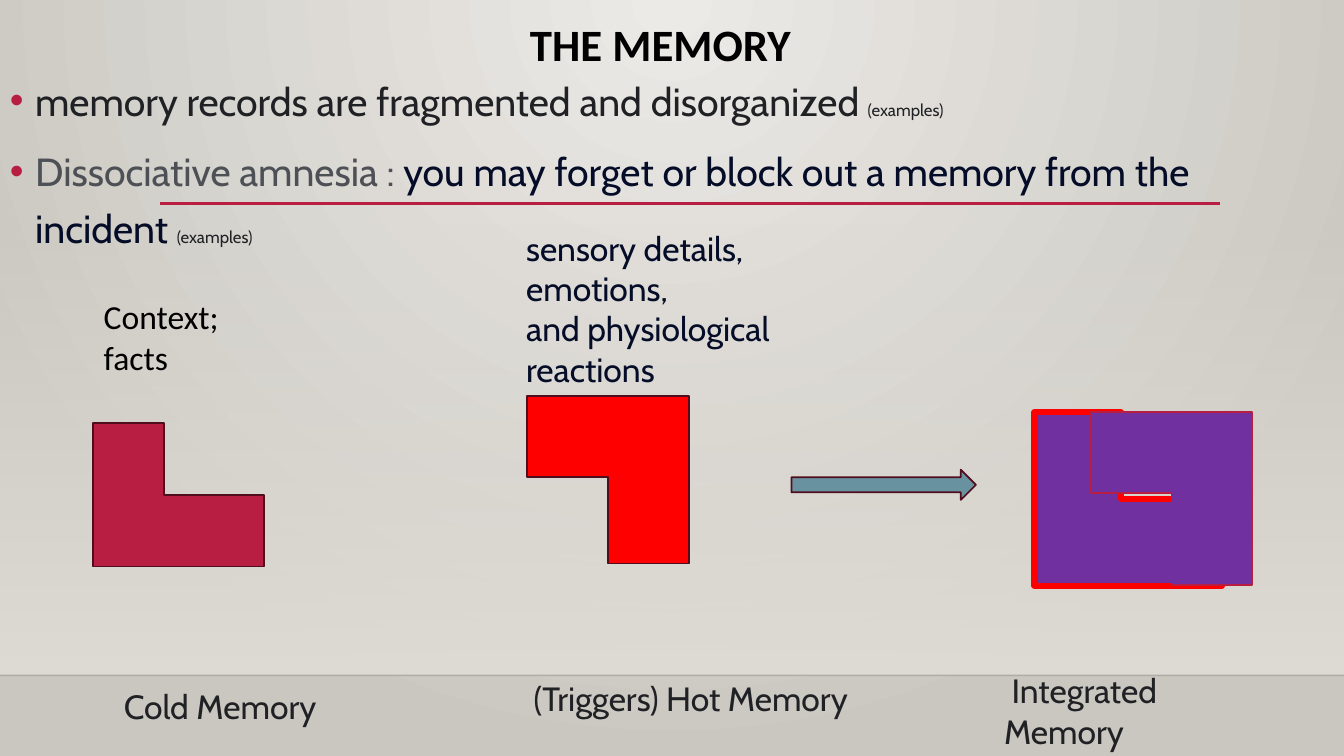
"""Builds the slide on cold, hot and integrated memory."""
import pptx
import pptx.dml.color
import pptx.enum.shapes
import pptx.enum.text
import pptx.oxml
import pptx.oxml.ns
import pptx.util
from pptx.util import Inches

COLORS = {
    "backdrop_light": "ECEAE7", "backdrop_dark": "CAC7C1", "wall": "DFDBD5",
    "crimson": "B71E42", "maroon": "500D1D", "red": "FF0000",
    "purple": "7030A0", "teal": "6892A0", "black": "000000",
    "floor": "000001", "ink": "202124", "gray": "4D5156", "navy": "040C28",
}
NAMESPACE = pptx.oxml.ns.nsdecls("a")
SHAPES = pptx.enum.shapes.MSO_SHAPE


def rgb(name):
    """Return the named colour."""
    return pptx.dml.color.RGBColor.from_string(COLORS[name])


def gradient(start, end, direction, start_alpha=100):
    """Return a two-stop gradient fill element."""
    return pptx.oxml.parse_xml(
        f'<a:gradFill {NAMESPACE} rotWithShape="1"><a:gsLst>'
        f'<a:gs pos="0"><a:srgbClr val="{COLORS[start]}">'
        f'<a:alpha val="{start_alpha * 1000}"/></a:srgbClr></a:gs>'
        f'<a:gs pos="100000"><a:srgbClr val="{COLORS[end]}"/></a:gs>'
        f'</a:gsLst>{direction}</a:gradFill>')


def swap_fill(parent, new_fill):
    """Replace the solid fill of a properties element."""
    old_fill = parent.find(pptx.oxml.ns.qn("a:solidFill"))
    parent.replace(old_fill, new_fill)


def add_backdrop(page):
    """Paint the radial background and the wall that fades in above the floor."""
    page.background.fill.solid()
    page.background.fill.fore_color.rgb = rgb("backdrop_dark")
    swap_fill(page.element.xpath("p:cSld/p:bg/p:bgPr")[0], gradient(
        "backdrop_light", "backdrop_dark",
        '<a:path path="circle"><a:fillToRect l="43000" t="0" r="43000" b="100000"/></a:path>'))
    wall = add_shape(page, SHAPES.RECTANGLE, (0, 2.21, 13.33, 4.49), "wall")
    swap_fill(wall.element.spPr, gradient(
        "wall", "wall", '<a:lin ang="5400000" scaled="0"/>', start_alpha=0))


def add_shape(page, kind, place, fill, line=None, width=1.25, rotation=0):
    """Add a filled preset shape with an optional outline."""
    shape = page.shapes.add_shape(kind, *map(Inches, place))
    shape.shadow.inherit = False
    shape.rotation = rotation
    shape.fill.solid()
    shape.fill.fore_color.rgb = rgb(fill)
    if line:
        shape.line.color.rgb = rgb(line)
        shape.line.width = pptx.util.Pt(width)
    else:
        shape.line.fill.background()
    return shape


def add_rule(page, left, right, top, color, width, alpha=100):
    """Add a horizontal line."""
    rule = page.shapes.add_connector(
        pptx.enum.shapes.MSO_CONNECTOR.STRAIGHT,
        Inches(left), Inches(top), Inches(right), Inches(top))
    rule.line.color.rgb = rgb(color)
    rule.line.width = pptx.util.Pt(width)
    tint = rule.element.spPr.xpath("a:ln/a:solidFill/a:srgbClr")[0]
    tint.append(pptx.oxml.parse_xml(f'<a:alpha {NAMESPACE} val="{alpha * 1000}"/>'))
    rule.element.spPr.append(pptx.oxml.parse_xml(f"<a:effectLst {NAMESPACE}/>"))


def add_text(page, place, paragraphs, font="Cabin"):
    """Add a text box whose paragraphs are lists of (text, size, colour) spans."""
    box = page.shapes.add_textbox(*map(Inches, place))
    box.text_frame.word_wrap = True
    box.text_frame.text = "\n".join("" for _ in paragraphs)
    for para, spans in zip(box.text_frame.paragraphs, paragraphs):
        for text, size, color in spans:
            span = para.add_run()
            span.text = text
            span.font.name = font
            span.font.size = pptx.util.Pt(size)
            span.font.color.rgb = rgb(color)
    return box


def add_title(page, text):
    """Add the centred bold title."""
    box = add_text(page, (0.8, 0.18, 11.5, 0.93), [[(text, 32, "black")]], "Calibri")
    para = box.text_frame.paragraphs[0]
    para.alignment = pptx.enum.text.PP_ALIGN.CENTER
    para.line_spacing = 0.9
    para.runs[0].font.bold = True


def add_bullets(page, place, paragraphs):
    """Add a bulleted list with hanging indents."""
    box = add_text(page, place, paragraphs)
    for index, para in enumerate(box.text_frame.paragraphs):
        para.line_spacing = 1.2
        para.space_before = pptx.util.Pt(10 if index else 0)
        properties = para._p.get_or_add_pPr()
        properties.set("marL", str(Inches(0.25)))
        properties.set("indent", str(-Inches(0.25)))
        for xml in (
                f'<a:buClr {NAMESPACE}><a:srgbClr val="{COLORS["crimson"]}"/></a:buClr>',
                f'<a:buFont {NAMESPACE} typeface="Arial"/>',
                f'<a:buChar {NAMESPACE} char="•"/>'):
            properties.append(pptx.oxml.parse_xml(xml))


def main():
    """Build and save the deck."""
    deck = pptx.Presentation()
    deck.slide_width, deck.slide_height = Inches(13.33), Inches(7.5)
    page = deck.slides.add_slide(deck.slide_layouts[6])

    add_backdrop(page)
    add_rule(page, 0, 13.33, 6.7, "floor", 1, alpha=20)
    add_rule(page, 1.59, 12.1, 2.02, "crimson", 2.5)
    add_title(page, "THE MEMORY")
    add_bullets(page, (0, 0.62, 12.99, 1.72), [
        [("memory records are fragmented and disorganized ", 28, "ink"),
         ("(examples)", 12, "ink")],
        [("Dissociative amnesia : ", 28, "gray"),
         ("you may forget or block out a memory from the incident ", 28, "navy"),
         ("(examples)", 12, "ink")],
    ])

    for place, fill, line, width, rotation in (
            ((10.26, 4.09, 1.86, 1.72), "purple", "red", 4.5, 0),
            ((10.82, 4.09, 1.6, 1.71), "purple", "crimson", 1.25, 180),
            ((0.92, 4.2, 1.7, 1.42), "crimson", "maroon", 1.25, 0),
            ((5.23, 3.93, 1.6, 1.66), "red", "maroon", 1.25, 180)):
        add_shape(page, SHAPES.CORNER, place, fill, line, width, rotation)
    add_shape(page, SHAPES.RIGHT_ARROW, (7.85, 4.66, 1.83, 0.3), "teal", "maroon")

    for place, label in (
            ((1.13, 6.76, 2.24, 0.5), "Cold Memory"),
            ((5.12, 6.68, 3.49, 0.5), " (Triggers) Hot Memory"),
            ((9.86, 6.6, 2.92, 0.5), " Integrated Memory")):
        add_text(page, place, [[(label, 24, "ink")]])
    add_text(page, (0.93, 2.89, 1.69, 0.91), [[("Context; facts", 24, "black")]], "Calibri")
    add_text(page, (5.12, 2.21, 3.2, 1.72), [
        [("sensory details, emotions,", 24, "navy")],
        [("and physiological reactions", 24, "navy")],
    ])
    deck.save("out.pptx")


if __name__ == "__main__":
    main()
